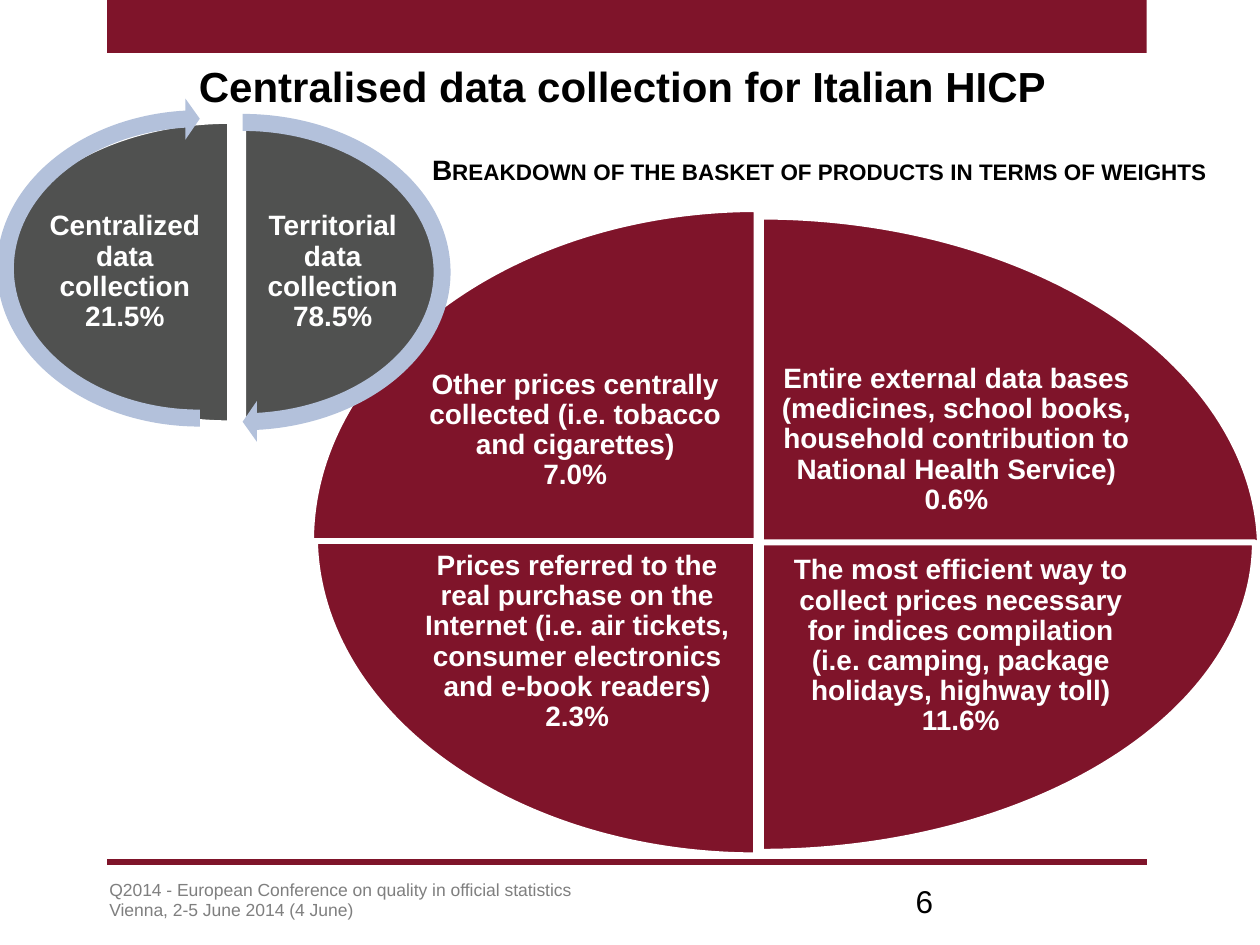
"""Build a slide on centralised data collection for the Italian HICP."""
from dataclasses import dataclass

from lxml import etree
from pptx import Presentation
from pptx import util as u
from pptx.dml.color import RGBColor
from pptx.enum import shapes, text
from pptx.oxml.ns import qn

COLOURS = {
    "burgundy": "7F142A",
    "charcoal": "505150",
    "arrow": "B3C1DB",
    "white": "FFFFFF",
    "black": "000000",
    "footer": "7F7F7F",
}
LINE_WIDTH = 3.35
LABEL_INSET = 1.44
Box = tuple[float, float, float, float]


@dataclass(frozen=True)
class TextStyle:
    size: float
    colour: str
    bold: bool = False
    centred: bool = False
    small_caps: bool = False


@dataclass(frozen=True)
class Slice:
    box: Box
    start: int
    end: int
    colour: str
    label: str
    label_box: Box


@dataclass(frozen=True)
class LoopArrow:
    box: Box
    start: float
    end: float


TITLE = TextStyle(24, "black", bold=True, centred=True)
HEADING = TextStyle(16, "black", bold=True, small_caps=True)
LABEL = TextStyle(16, "white", bold=True, centred=True)
FOOTER = TextStyle(10, "footer")
NUMBER = TextStyle(18, "black")

BASKET_SLICES = [
    Slice((149.8, 123.8, 570.2, 380.9), 270, 0, "burgundy",
          "Entire external data bases (medicines, school books, household "
          "contribution to National Health Service) 0.6%",
          (441.4, 194.4, 210.2, 113.8)),
    Slice((152.6, 133.2, 564.5, 353.5), 0, 90, "burgundy",
          "The most efficient way to collect prices necessary for indices "
          "compilation (i.e. camping, package holidays, highway toll) 11.6%",
          (445, 316.8, 208, 105.1)),
    Slice((180, 123.8, 504, 365), 90, 180, "burgundy",
          "Prices referred to the real purchase on the Internet (i.e. air "
          "tickets, consumer electronics and e-book readers) 2.3%",
          (236.9, 312.5, 185.8, 108.7)),
    Slice((177.8, 119.5, 509, 379.4), 180, 270, "burgundy",
          "Other prices centrally collected (i.e. tobacco and cigarettes)\n7.0%",
          (234.7, 189.4, 187.9, 113)),
]
COLLECTION_SLICES = [
    Slice((25.9, 69.1, 226.1, 172.8), 270, 90, "charcoal",
          "Territorial data collection 78.5%", (149.8, 114.5, 80.6, 82.1)),
    Slice((-1.4, 69.1, 265.7, 172.8), 90, 270, "charcoal",
          "Centralized data collection 21.5%", (23.8, 114.5, 95, 82.1)),
]
LOOP_ARROWS = [
    LoopArrow((13, 58.3, 251.3, 194.4), 270, 84.54),
    LoopArrow((-8.6, 56.2, 245.5, 194.4), 90, 264.54),
]


def rgb(name: str) -> RGBColor:
    """Return a named palette colour."""
    return RGBColor.from_string(COLOURS[name])


def points(box: Box) -> list[int]:
    """Convert a box given in points to lengths."""
    return [u.Pt(value) for value in box]


def angle(degrees: float) -> float:
    """Convert degrees to a normalised shape adjustment."""
    return degrees * 0.6


def set_all(target, values: dict) -> None:
    """Set every attribute named in a dict of format values."""
    for name, value in values.items():
        setattr(target, name, value)


def write_text(frame, content: str, style: TextStyle, spacing: list[float],
               inset: float | None = None, middle: bool = False) -> None:
    """Fill a text frame with one styled paragraph per line of content."""
    anchor = text.MSO_ANCHOR.MIDDLE if middle else text.MSO_ANCHOR.TOP
    set_all(frame, {"word_wrap": True, "vertical_anchor": anchor})
    if inset is not None:
        sides = ("left", "right", "top", "bottom")
        set_all(frame, {f"margin_{side}": u.Pt(inset) for side in sides})
    alignment = text.PP_ALIGN.CENTER if style.centred else text.PP_ALIGN.LEFT
    for index, line in enumerate(content.split("\n")):
        paragraph = frame.add_paragraph() if index else frame.paragraphs[0]
        set_all(paragraph, {"alignment": alignment,
                            "line_spacing": spacing[min(index, len(spacing) - 1)]})
        run = paragraph.add_run()
        run.text = line
        set_all(run.font, {"name": "Arial", "size": u.Pt(style.size),
                           "bold": style.bold})
        run.font.color.rgb = rgb(style.colour)
        if style.small_caps:
            run.font._element.set("cap", "small")


def add_text(slide, box: Box, content: str, style: TextStyle,
             spacing: list[float], **layout) -> None:
    """Add a text box."""
    frame = slide.shapes.add_textbox(*points(box)).text_frame
    write_text(frame, content, style, spacing, **layout)


def add_filled(slide, kind, box: Box, colour: str,
               adjustments: list[float], outlined: bool = False) -> None:
    """Add a flat preset shape, with a white outline if asked."""
    shape = slide.shapes.add_shape(kind, *points(box))
    shape.shadow.inherit = False
    shape.fill.solid()
    shape.fill.fore_color.rgb = rgb(colour)
    if outlined:
        shape.line.color.rgb = rgb("white")
        shape.line.width = u.Pt(LINE_WIDTH)
    else:
        shape.line.fill.background()
    for index, value in enumerate(adjustments):
        shape.adjustments[index] = value


def add_slice(slide, item: Slice) -> None:
    """Add a pie slice and its label."""
    add_filled(slide, shapes.MSO_SHAPE.PIE, item.box, item.colour,
               [angle(item.start), angle(item.end)], outlined=True)
    add_text(slide, item.label_box, item.label, LABEL, [0.9],
             inset=LABEL_INSET, middle=True)


def add_loop_arrow(slide, item: LoopArrow) -> None:
    """Add a half-turn arrow around the collection pie."""
    add_filled(slide, shapes.MSO_SHAPE.CIRCULAR_ARROW, item.box, "arrow",
               [0.05, 3.28, angle(item.end), angle(item.start), 0.06])


def add_footer(slide) -> None:
    """Add the footer rule, the conference note and the slide number."""
    rule = slide.shapes.add_connector(shapes.MSO_CONNECTOR.STRAIGHT,
                                      *points((61.2, 492.5, 655.2, 492.5)))
    rule.line.color.rgb = rgb("burgundy")
    rule.line.width = u.Pt(LINE_WIDTH)
    etree.SubElement(rule._element.spPr, qn("a:effectLst"))
    add_text(slide, (55.4, 501.8, 551.5, 28.1),
             "Q2014 - European Conference on quality in official statistics\n"
             "Vienna, 2-5 June 2014 (4 June)", FOOTER, [0.7, 1.0])
    add_text(slide, (516.2, 500.4, 167.8, 28.8), "6", NUMBER, [1.0])


def main() -> None:
    """Build and save the presentation."""
    presentation = Presentation()
    set_all(presentation, {"slide_width": u.Pt(720), "slide_height": u.Pt(540)})
    slide = presentation.slides.add_slide(presentation.slide_layouts[5])
    title = slide.shapes.title
    set_all(title, dict(zip(("left", "top", "width", "height"),
                            points((31.7, 28.1, 648, 41.8)))))
    write_text(title.text_frame, "Centralised data collection for Italian HICP",
               TITLE, [1.0], middle=True)
    add_filled(slide, shapes.MSO_SHAPE.RECTANGLE, (61.2, 0, 594, 30.2),
               "burgundy", [])
    add_footer(slide)
    for item in BASKET_SLICES + COLLECTION_SLICES:
        add_slice(slide, item)
    for arrow in LOOP_ARROWS:
        add_loop_arrow(slide, arrow)
    add_text(slide, (239.8, 83.5, 467.3, 26.6),
             "Breakdown of the basket of products in terms of weights",
             HEADING, [1.0])
    presentation.save("out.pptx")


if __name__ == "__main__":
    main()
